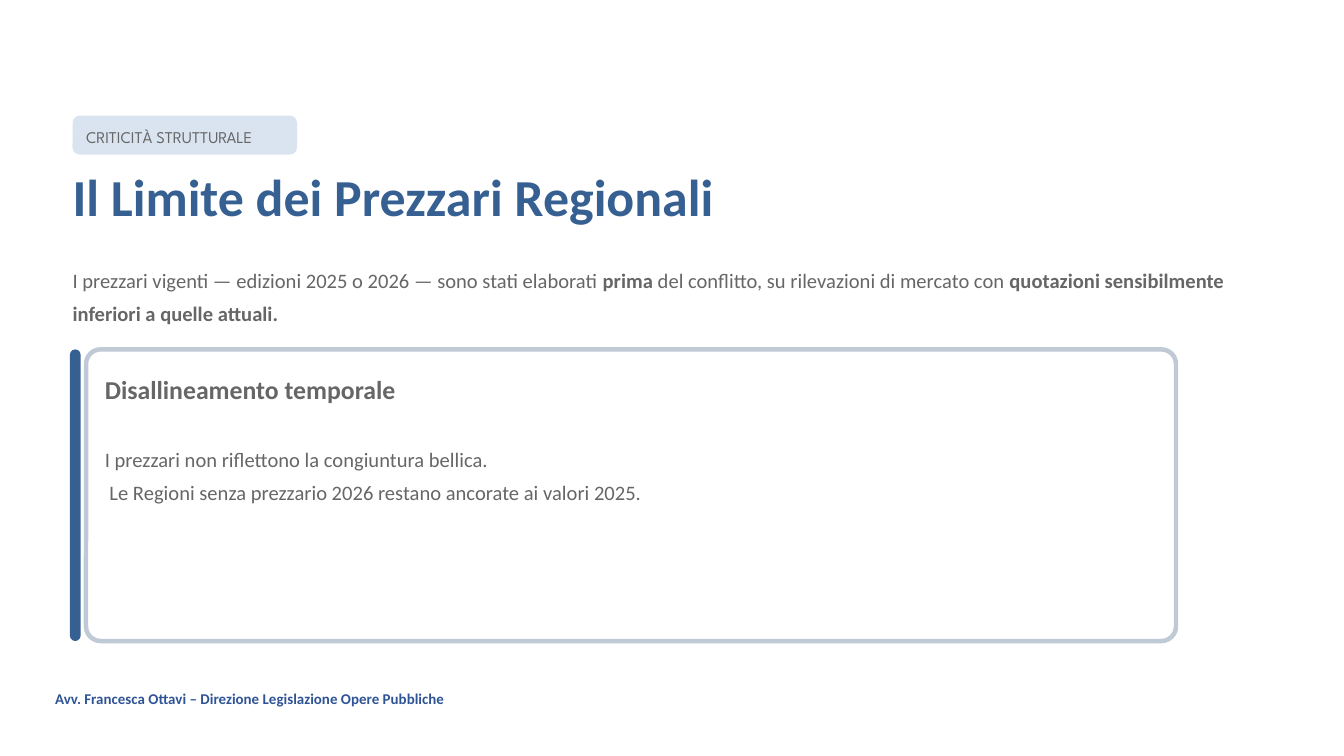
from dataclasses import dataclass

from pptx import Presentation
from pptx.dml.color import RGBColor
from pptx.enum import shapes, text
from pptx.util import Inches, Pt


@dataclass(frozen=True)
class Theme:
    blue: str = "376092"
    footer_blue: str = "2F5496"
    grey: str = "666666"
    tag_fill: str = "DAE4F1"
    border: str = "C0CAD7"
    white: str = "FFFFFF"
    font: str = "Calibri"
    tag_font: str = "League Spartan"
    title_size: float = 27.8
    heading_size: float = 13.8
    body_size: float = 11
    tag_size: float = 8.8
    footer_size: float = 8
    body_leading: float = 17.8


THEME = Theme()


def format_span(span, size, color, font=THEME.font, bold=False):
    span.font.name = font
    span.font.size = Pt(size)
    span.font.bold = bold
    span.font.color.rgb = RGBColor.from_string(color)


def write(box, paragraphs, size, color, leading=None, **style):
    frame = box.text_frame
    frame.margin_left = frame.margin_right = frame.margin_top = frame.margin_bottom = 0
    frame.word_wrap = True
    frame.auto_size = text.MSO_AUTO_SIZE.NONE
    frame.vertical_anchor = text.MSO_ANCHOR.TOP
    frame.text = "\n".join(paragraphs)
    for para in frame.paragraphs:
        para.alignment = text.PP_ALIGN.LEFT
        if leading:
            para.line_spacing = Pt(leading)
        for span in para.runs:
            format_span(span, size, color, **style)


def add_text(page, left, top, width, height, paragraphs, size, color, **style):
    box = page.shapes.add_textbox(Inches(left), Inches(top), Inches(width), Inches(height))
    write(box, paragraphs, size, color, **style)
    return box


def add_panel(page, left, top, width, height, rounding, fill, border=None):
    panel = page.shapes.add_shape(
        shapes.MSO_SHAPE.ROUNDED_RECTANGLE,
        Inches(left), Inches(top), Inches(width), Inches(height))
    panel.shadow.inherit = False
    panel.adjustments[0] = rounding
    panel.fill.solid()
    panel.fill.fore_color.rgb = RGBColor.from_string(fill)
    if border:
        panel.line.color.rgb = RGBColor.from_string(border)
        panel.line.width = Pt(2.4)
    else:
        panel.line.fill.background()


def add_tag(page, left, top, width, height):
    add_panel(page, left, top, width, height, 0.18, THEME.tag_fill)
    add_text(page, left + 0.1, top + 0.04, width - 0.19, 0.2, ["CRITICITÀ STRUTTURALE"],
             THEME.tag_size, THEME.grey, leading=14.1, font=THEME.tag_font)


def set_title(page, left, top, width, height):
    title = page.shapes.title
    title.left, title.top = Inches(left), Inches(top)
    title.width, title.height = Inches(width), Inches(height)
    write(title, ["Il Limite dei Prezzari Regionali"], THEME.title_size, THEME.blue,
          leading=34.7, bold=True)


def add_intro(page, left, top, width, height):
    pieces = [
        ("I prezzari vigenti — edizioni 2025 o 2026 — sono stati elaborati ", False),
        ("prima", True),
        (" del conflitto, su rilevazioni di mercato con ", False),
        ("quotazioni sensibilmente inferiori a quelle attuali.", True),
    ]
    box = add_text(page, left, top, width, height, [""], THEME.body_size, THEME.grey,
                   leading=THEME.body_leading)
    para = box.text_frame.paragraphs[0]
    for words, bold in pieces:
        span = para.add_run()
        span.text = words
        format_span(span, THEME.body_size, THEME.grey, bold=bold)


def add_card(page, left, top, width, height):
    add_panel(page, left + 0.12, top, width - 0.12, height, 0.05, THEME.white, THEME.border)
    add_panel(page, left, top, 0.08, height, 0.5, THEME.blue)
    add_text(page, left + 0.26, top + 0.17, 2.45, 0.48, ["Disallineamento temporale"],
             THEME.heading_size, THEME.grey, leading=17.2, bold=True)
    add_text(page, left + 0.26, top + 0.66, 5.98, 1.09,
             ["I prezzari non riflettono la congiuntura bellica.",
              " Le Regioni senza prezzario 2026 restano ancorate ai valori 2025."],
             THEME.body_size, THEME.grey, leading=THEME.body_leading)


def add_footer(page, left, top, width, height):
    box = add_text(page, left, top, width, height,
                   ["Avv. Francesca Ottavi – Direzione Legislazione Opere Pubbliche"],
                   THEME.footer_size, THEME.footer_blue, bold=True)
    box.text_frame.margin_left = Inches(0.01)
    box.text_frame.margin_top = Inches(0.02)


def main():
    deck = Presentation()
    deck.slide_width, deck.slide_height = Inches(10), Inches(10 * 9 / 16)
    page = deck.slides.add_slide(deck.slide_layouts.get_by_name("Title Only"))
    add_footer(page, 0.4, 5.11, 2.92, 0.16)
    add_tag(page, 0.54, 0.86, 1.67, 0.29)
    set_title(page, 0.54, 1.21, 5.61, 0.48)
    add_intro(page, 0.54, 1.93, 8.91, 0.5)
    add_card(page, 0.52, 2.6, 8.23, 2.17)
    deck.save("out.pptx")


if __name__ == "__main__":
    main()
